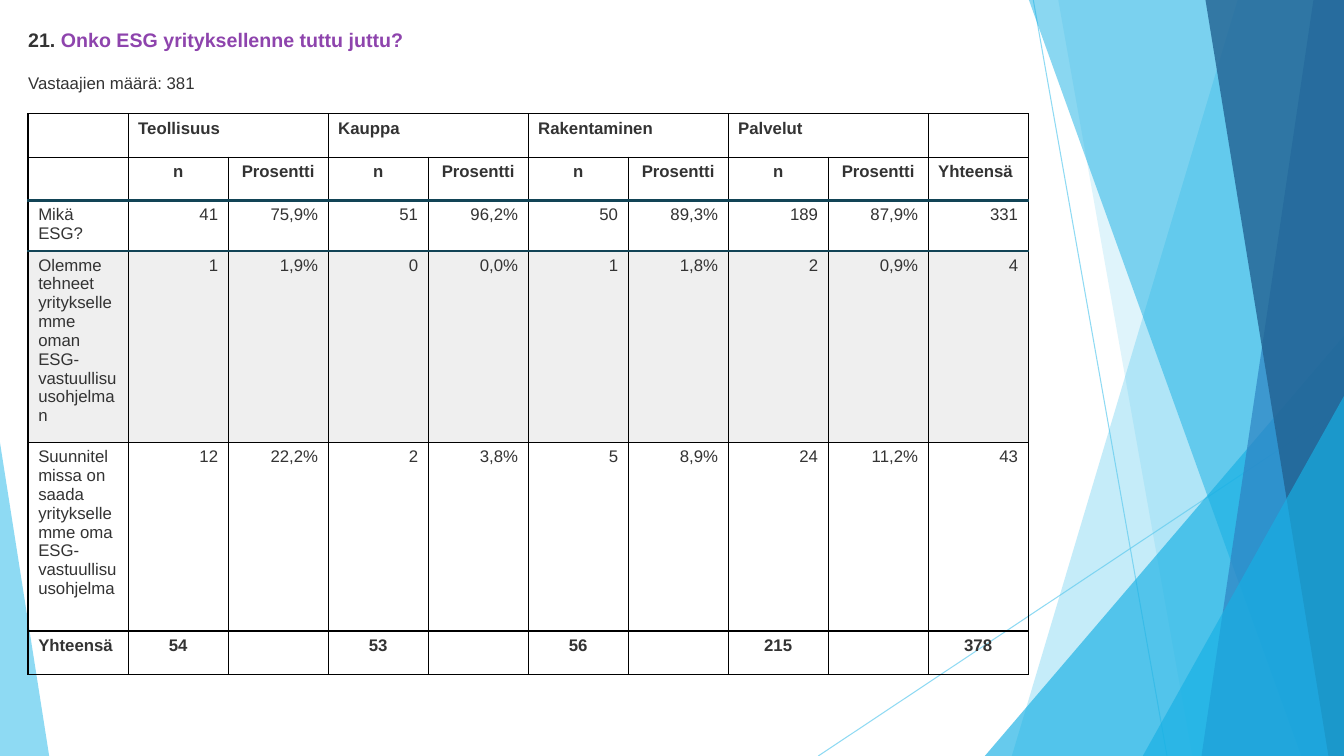
"""Builds the survey slide on ESG awareness by industry."""
import pptx
import pptx.dml.color
import pptx.enum.shapes
import pptx.enum.text
import pptx.oxml
import pptx.oxml.ns
import pptx.util
from dataclasses import dataclass

Cm = pptx.util.Cm
ALIGN = pptx.enum.text.PP_ALIGN


@dataclass(frozen=True)
class Theme:
    font: str = "Arial"
    text: str = "333333"
    question: str = "8E44AD"
    grid: str = "000000"
    rule: str = "124456"
    band: str = "EFEFEF"
    sky: str = "5FCBEF"
    cyan: str = "17B0E4"
    blue: str = "2E83C3"
    navy: str = "226292"
    title_size: int = 14
    body_size: int = 12


THEME = Theme()

QUESTION = [("21. ", THEME.text), ("Onko ESG yrityksellenne tuttu juttu?", THEME.question)]
RESPONDENTS = [("Vastaajien määrä: 381", THEME.text)]
INDUSTRIES = ["Teollisuus", "Kauppa", "Rakentaminen", "Palvelut"]
MEASURES = ["n", "Prosentti"]
TOTAL = "Yhteensä"
ANSWERS = [
    ("Mikä ESG?", "41", "75,9%", "51", "96,2%", "50", "89,3%", "189", "87,9%", "331"),
    ("Olemme tehneet yrityksellemme oman ESG-vastuullisuusohjelman",
     "1", "1,9%", "0", "0,0%", "1", "1,8%", "2", "0,9%", "4"),
    ("Suunnitelmissa on saada yrityksellemme oma ESG-vastuullisuusohjelma",
     "12", "22,2%", "2", "3,8%", "5", "8,9%", "24", "11,2%", "43"),
]
TOTALS = ["54", "53", "56", "215"]
GRAND_TOTAL = "378"

SLIDE_WIDTH, SLIDE_HEIGHT = 33.87, 19.05
MARGIN, TEXT_WIDTH = 0.71, 32.46
TABLE_TOP, COLUMN_WIDTH = 2.87, 2.52
ROW_HEIGHTS = [1.09, 1.09, 1.27, 4.83, 4.75, 1.09]
HEADER_ROWS, BAND_ROW = 2, 3

RAYS = [(26.04, 0, 29.41, SLIDE_HEIGHT), (SLIDE_WIDTH, 10.24, 20.62, SLIDE_HEIGHT)]
FACETS = [
    ("sheet", (31.19, 25.5), THEME.sky, 36),
    ("sheet", (26.67, 30.05), THEME.sky, 20),
    ("corner", (24.82, 8.46, 9.05, 10.59, 1), THEME.cyan, 66),
    ("sheet", (25.93, 32.79), THEME.cyan, 50),
    ("sheet", (33.1, 30.28), THEME.blue, 70),
    ("sheet", (30.38, 33.48), THEME.navy, 80),
    ("corner", (28.8, 9.98, 5.07, 9.07, 1), THEME.cyan, 66),
    ("corner", (0, 11.15, 1.24, 7.9, 0), THEME.sky, 70),
]


def rgb(colour):
    return pptx.dml.color.RGBColor.from_string(colour)


def set_alpha(properties, percent):
    for colour in properties.iter(pptx.oxml.ns.qn("a:srgbClr")):
        colour.append(pptx.oxml.parse_xml(
            f'<a:alpha {pptx.oxml.ns.nsdecls("a")} val="{percent * 1000}"/>'))


def style_run(run, size, colour, bold):
    run.font.name, run.font.size = THEME.font, pptx.util.Pt(size)
    run.font.color.rgb, run.font.bold = rgb(colour), bold


def draw_ray(slide, ends):
    ray = slide.shapes.add_connector(
        pptx.enum.shapes.MSO_CONNECTOR.STRAIGHT, *map(Cm, ends))
    ray.line.color.rgb, ray.line.width = rgb(THEME.sky), pptx.util.Pt(0.75)
    properties = ray._element.spPr
    set_alpha(properties, 70)
    properties.append(pptx.oxml.parse_xml(f'<a:effectLst {pptx.oxml.ns.nsdecls("a")}/>'))


def draw_facet(slide, kind, geometry, colour, opacity):
    if kind == "sheet":
        top_x, bottom_x = geometry
        builder = slide.shapes.build_freeform(Cm(top_x), 0)
        builder.add_line_segments([
            (Cm(SLIDE_WIDTH), 0), (Cm(SLIDE_WIDTH), Cm(SLIDE_HEIGHT)),
            (Cm(bottom_x), Cm(SLIDE_HEIGHT))], close=True)
        facet = builder.convert_to_shape()
    else:
        *box, apex = geometry
        facet = slide.shapes.add_shape(
            pptx.enum.shapes.MSO_SHAPE.ISOSCELES_TRIANGLE, *map(Cm, box))
        facet.adjustments[0] = apex
    facet.shadow.inherit = False
    facet.fill.solid()
    facet.fill.fore_color.rgb = rgb(colour)
    facet.line.fill.background()
    set_alpha(facet._element.spPr, opacity)


def add_heading(slide, top, height, parts, size, bold):
    frame = slide.shapes.add_textbox(
        Cm(MARGIN), Cm(top), Cm(TEXT_WIDTH), Cm(height)).text_frame
    frame.word_wrap = True
    frame.margin_left = frame.margin_right = frame.margin_top = frame.margin_bottom = 0
    for words, colour in parts:
        run = frame.paragraphs[0].add_run()
        run.text = words
        style_run(run, size, colour, bold)


def table_rows():
    groups, measures, totals = [""], [""], [TOTAL]
    for industry, count in zip(INDUSTRIES, TOTALS):
        groups += [industry, ""]
        measures += MEASURES
        totals += [count, ""]
    return [groups + [""], measures + [TOTAL], *ANSWERS, totals + [GRAND_TOTAL]]


def set_borders(cell, row, column):
    rules = {HEADER_ROWS: 2, BAND_ROW: 1.5}
    edges = {"L": (THEME.grid, 1.5 if column == 0 else 1), "R": (THEME.grid, 1)}
    for side, edge in (("T", row), ("B", row + 1)):
        edges[side] = (THEME.rule, rules[edge]) if edge in rules else (THEME.grid, 1)
    for side, (colour, width) in edges.items():
        cell._tc.get_or_add_tcPr().append(pptx.oxml.parse_xml(
            f'<a:ln{side} {pptx.oxml.ns.nsdecls("a")} w="{pptx.util.Pt(width)}">'
            f'<a:solidFill><a:srgbClr val="{colour}"/></a:solidFill></a:ln{side}>'))


def cell_alignment(row, column, last_row, last_column):
    if column == 0 or row == 0 or (row == 1 and column == last_column):
        return ALIGN.LEFT
    return ALIGN.CENTER if row in (1, last_row) else ALIGN.RIGHT


def add_results(slide):
    rows = table_rows()
    last_row, last_column = len(rows) - 1, len(rows[0]) - 1
    results = slide.shapes.add_table(
        len(rows), len(rows[0]), Cm(MARGIN), Cm(TABLE_TOP),
        Cm(COLUMN_WIDTH * len(rows[0])), Cm(sum(ROW_HEIGHTS))).table
    results.first_row = results.horz_banding = False
    for column in results.columns:
        column.width = Cm(COLUMN_WIDTH)
    for row, height in zip(results.rows, ROW_HEIGHTS):
        row.height = Cm(height)
    for r, values in enumerate(rows):
        for c, value in enumerate(values):
            cell = results.cell(r, c)
            set_borders(cell, r, c)
            if r == BAND_ROW:
                cell.fill.solid()
                cell.fill.fore_color.rgb = rgb(THEME.band)
            else:
                cell.fill.background()
            if value:
                cell.text_frame.text = value
                paragraph = cell.text_frame.paragraphs[0]
                paragraph.alignment = cell_alignment(r, c, last_row, last_column)
                style_run(paragraph.runs[0], THEME.body_size, THEME.text,
                          r < HEADER_ROWS or r == last_row)
    for c in range(1, last_column, len(MEASURES)):
        results.cell(0, c).merge(results.cell(0, c + 1))


def main():
    deck = pptx.Presentation()
    deck.slide_width, deck.slide_height = Cm(SLIDE_WIDTH), Cm(SLIDE_HEIGHT)
    slide = deck.slides.add_slide(deck.slide_layouts[6])
    for ends in RAYS:
        draw_ray(slide, ends)
    for facet in FACETS:
        draw_facet(slide, *facet)
    add_heading(slide, 0.71, 0.58, QUESTION, THEME.title_size, True)
    add_heading(slide, 1.83, 0.51, RESPONDENTS, THEME.body_size, False)
    add_results(slide)
    deck.save("out.pptx")


if __name__ == "__main__":
    main()
